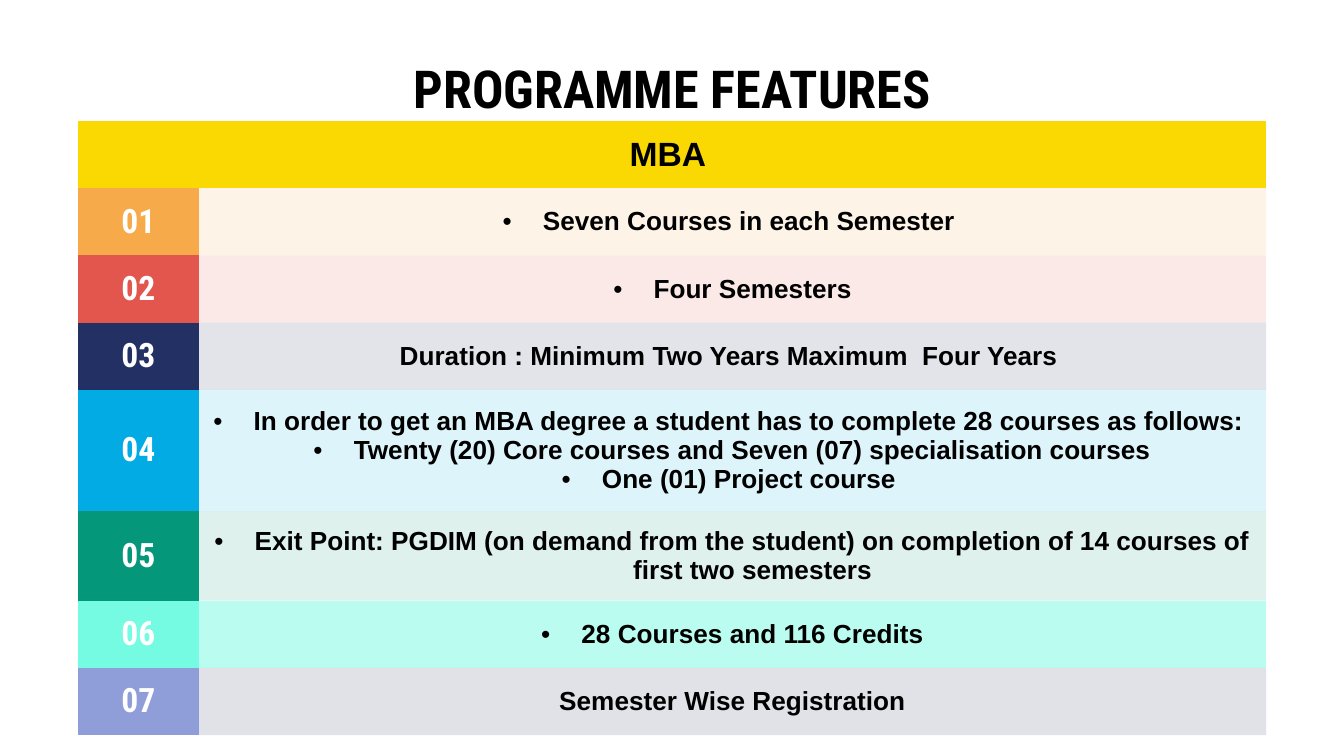
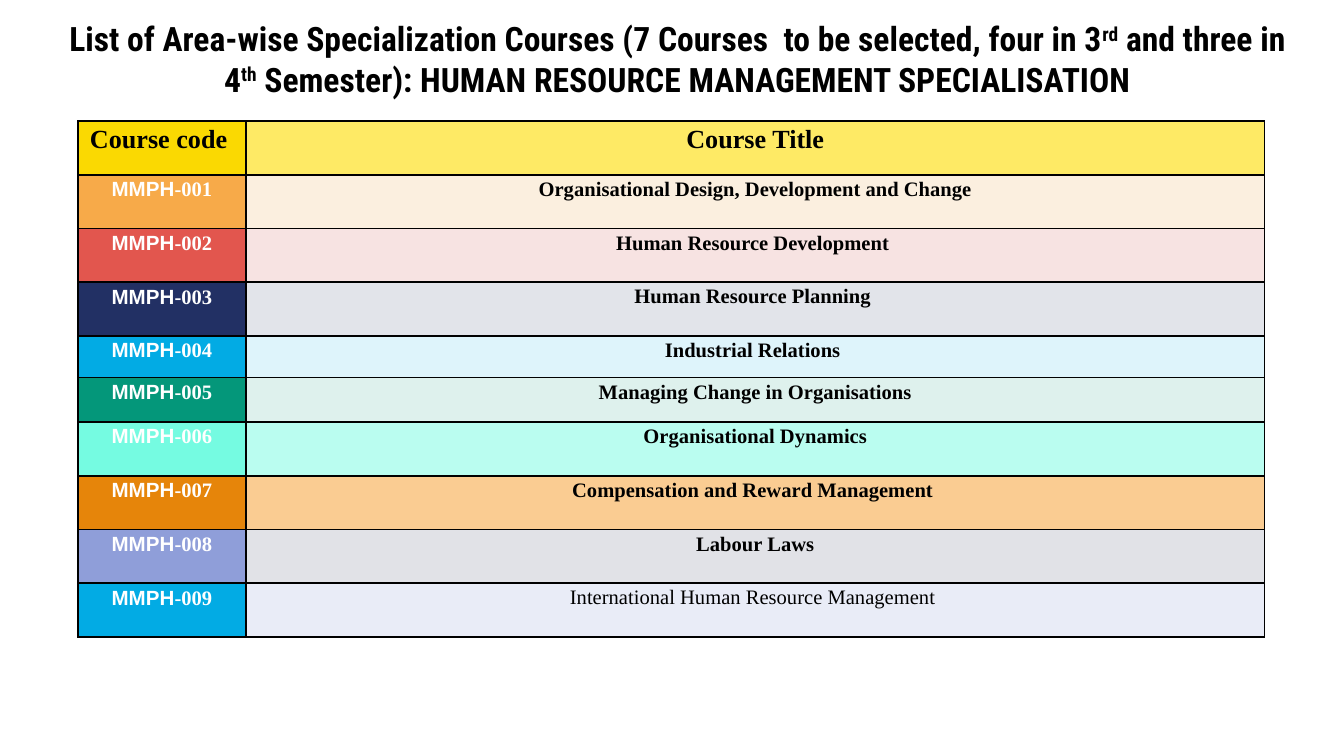
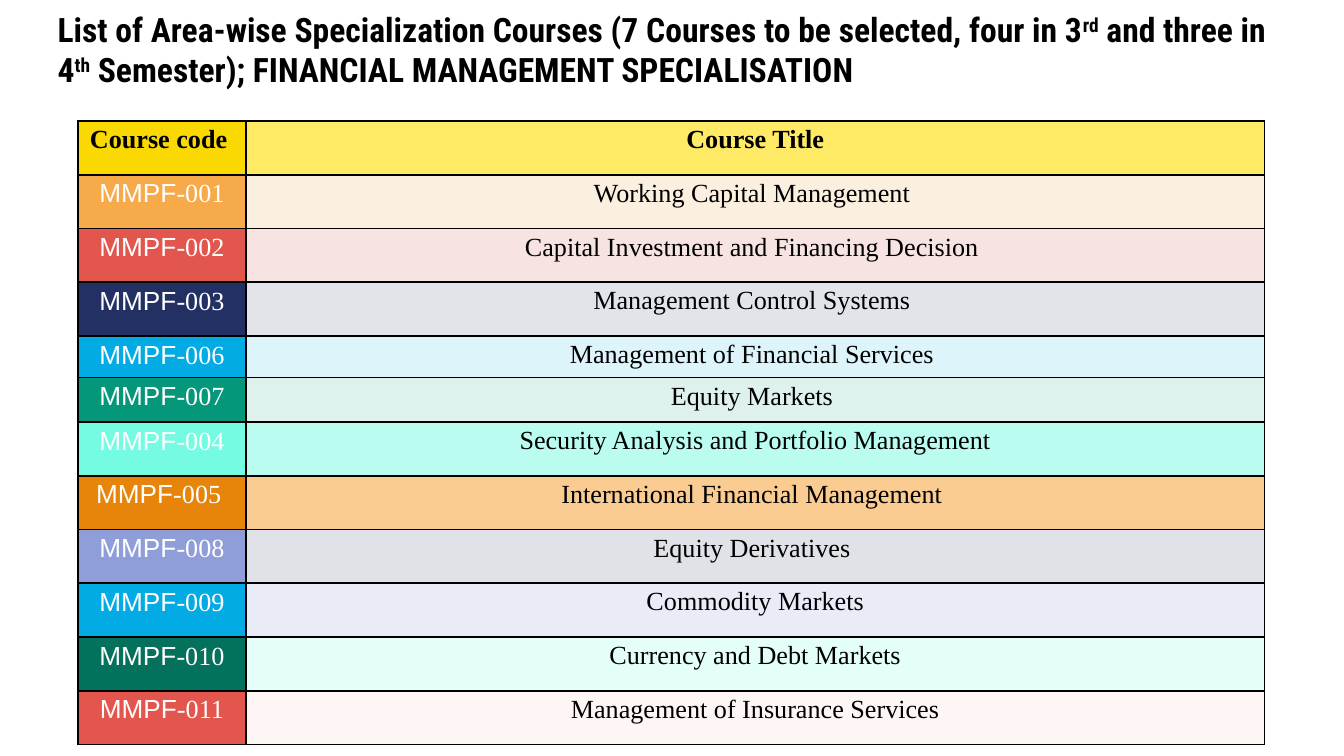
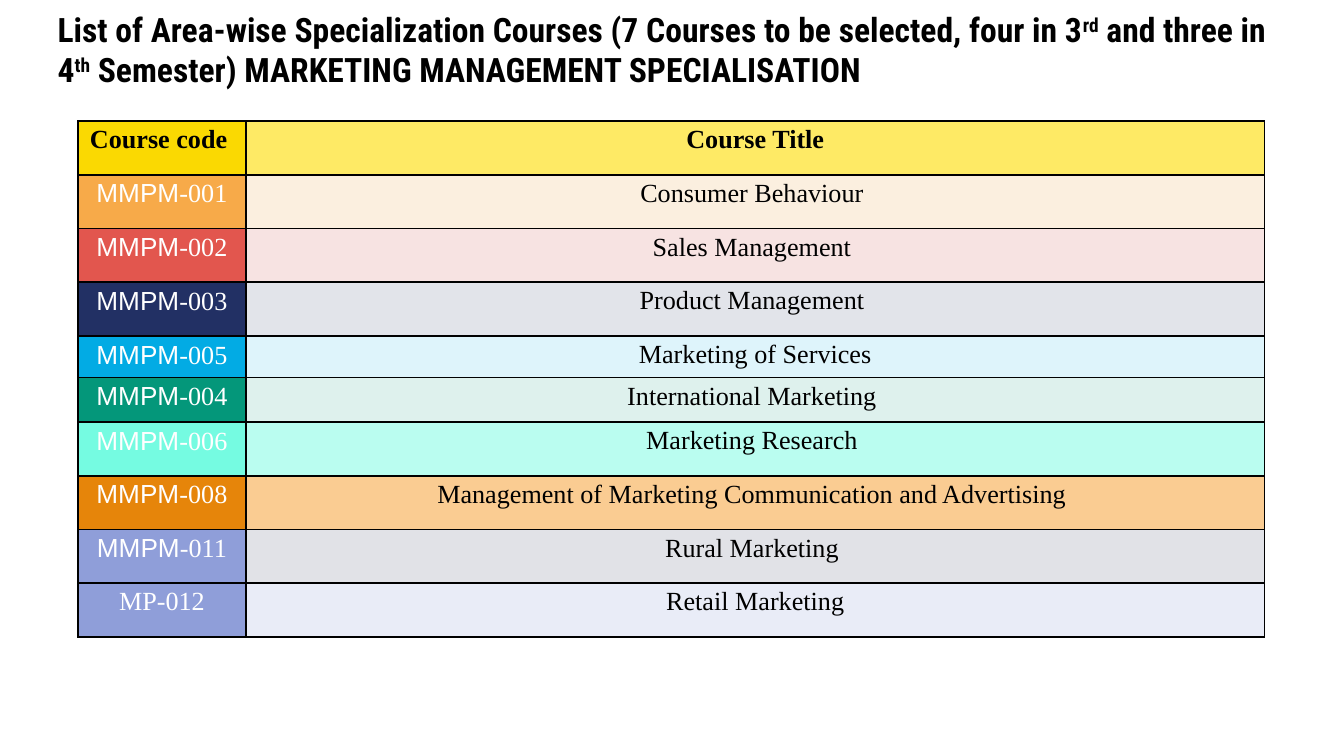
from lxml.etree import SubElement
from pptx import Presentation
from pptx.dml.color import RGBColor
from pptx.enum.text import MSO_ANCHOR as Anchor, PP_ALIGN as Align
from pptx.oxml import parse_xml
from pptx.oxml.ns import nsdecls, qn
from pptx.util import Inches, Pt

BLACK, WHITE = "000000", "FFFFFF"
YELLOW, LEMON = "FAD902", "FEEA65"
ORANGE, RED, NAVY, BLUE, GREEN = "F7AA49", "E2564E", "223064", "02ABE4", "04977A"
MINT, PALE_MINT, AMBER, PEACH = "75FBE1", "BAFDF0", "E6850A", "FACC92"
LILAC, INK, PINE = "8F9ED9", "1A244B", "03715C"
HEADING, SANS, SERIF = "Roboto Condensed", "Arial", "Times New Roman"
NO_STYLE = "{2D5ABB26-0587-4C30-8999-92F81FD0307C}"
SLIDE_WIDTH = Inches(10)
SLIDE_HEIGHT = SLIDE_WIDTH * 9 // 16
TABLE_LEFT, TABLE_TOP, TABLE_WIDTH = 0.58, 0.9, 8.83
TINT = 13

FEATURES_TITLE = "PROGRAMME FEATURES"
PROGRAMME = "MBA "
FEATURE_HEIGHTS = [0.4, 0.4, 0.4, 0.4, 0.72, 0.54, 0.4, 0.4]
FEATURES = [
    (ORANGE, (ORANGE, TINT), True, ["Seven Courses in each Semester "]),
    (RED, (RED, TINT), True, ["Four Semesters"]),
    (NAVY, (NAVY, TINT), False, ["Duration : Minimum Two Years Maximum  Four Years "]),
    (BLUE, (BLUE, TINT), True, [
        "In order to get an MBA degree a student has to complete 28 courses as follows: ",
        "Twenty (20) Core courses and Seven (07) specialisation courses",
        "One (01) Project course "]),
    (GREEN, (GREEN, TINT), True, [
        "Exit Point: PGDIM (on demand from the student) on completion of 14 courses of "
        "first two semesters"]),
    (MINT, (PALE_MINT, 100), True, ["28 Courses and 116 Credits"]),
    (LILAC, (INK, TINT), False, ["Semester Wise Registration"]),
]

COURSE_HEADS = [("Course code ", YELLOW), ("Course Title", LEMON)]
COURSE_FILLS = [
    (ORANGE, (AMBER, TINT)), (RED, ("C42920", TINT)), (NAVY, (NAVY, TINT)),
    (BLUE, (BLUE, TINT)), (GREEN, (GREEN, TINT)), (MINT, (PALE_MINT, 100)),
    (AMBER, (PEACH, 100)), (LILAC, (INK, TINT)), (BLUE, ("576EC6", TINT)),
    (PINE, ("2FFAD2", TINT)), (RED, ("F3BBB8", TINT)),
]
SHORT_ROWS = {4: 0.31, 5: 0.33}

SPECIALISATIONS = [
    {
        "lead": "List of Area-wise Specialization Courses (7 Courses  to be selected, four in 3",
        "tail": " Semester): HUMAN RESOURCE MANAGEMENT SPECIALISATION",
        "title_top": 0.08, "align": Align.CENTER, "size": 11, "bold": True, "plain_rows": {9},
        "height": 3.86, "prefix": "MMPH", "code_fills": {},
        "courses": [
            ("-001", "Organisational Design, Development and Change"),
            ("-002", "Human Resource Development "),
            ("-003", "Human Resource Planning "),
            ("-004", "Industrial Relations "),
            ("-005", "Managing Change in Organisations"),
            ("-006", "Organisational Dynamics"),
            ("-007", "Compensation and Reward Management "),
            ("-008", "Labour Laws"),
            ("-009", "International Human Resource Management "),
        ],
    },
    {
        "lead": "List of Area-wise Specialization Courses (7 Courses to be selected, four in 3",
        "tail": " Semester); FINANCIAL MANAGEMENT SPECIALISATION",
        "title_top": 0.01, "align": Align.LEFT, "size": 14, "bold": False, "plain_rows": set(),
        "height": 4.66, "prefix": "MMPF", "code_fills": {},
        "courses": [
            ("-001", "Working Capital Management "),
            ("-002", "Capital Investment and Financing Decision "),
            ("-003", "Management Control Systems "),
            ("-006", "Management of Financial Services "),
            ("-007", "Equity Markets "),
            ("-004", "Security Analysis and Portfolio Management"),
            ("-005 ", "International Financial Management "),
            ("-008", "Equity Derivatives "),
            ("-009", "Commodity Markets"),
            ("-010", "Currency and Debt Markets"),
            ("-011", "Management of Insurance Services"),
        ],
    },
    {
        "lead": "List of Area-wise Specialization Courses (7 Courses to be selected, four in 3",
        "tail": " Semester) MARKETING MANAGEMENT SPECIALISATION",
        "title_top": 0.01, "align": Align.LEFT, "size": 14, "bold": False, "plain_rows": set(),
        "height": 3.86, "prefix": "MMPM", "code_fills": {9: LILAC},
        "courses": [
            ("-001", "Consumer Behaviour "),
            ("-002", "Sales Management "),
            ("-003", "Product Management "),
            ("-005", "Marketing of Services"),
            ("-004", "International Marketing "),
            ("-006", "Marketing Research "),
            ("-008", "Management of Marketing Communication and Advertising "),
            ("-011", "Rural Marketing "),
            ("MP-012", "Retail Marketing"),
        ],
    },
]


def rgb(value):
    return RGBColor.from_string(value)


def apply(target, formats):
    for attribute, value in formats.items():
        setattr(target, attribute, value)


def insets(side, edge):
    return {"margin_left": Inches(side), "margin_right": Inches(side),
            "margin_top": Inches(edge), "margin_bottom": Inches(edge)}


def add_run(paragraph, text, size, face, color=BLACK, bold=True, baseline=0):
    run = paragraph.add_run()
    run.text = text
    apply(run.font, {"size": Pt(size), "name": face, "bold": bold})
    run.font.color.rgb = rgb(color)
    if baseline:
        run.font._element.set("baseline", str(baseline * 1000))


def add_title(slide, parts, box, size, align):
    frame = slide.shapes.add_textbox(*map(Inches, box)).text_frame
    apply(frame, {"word_wrap": True, "vertical_anchor": Anchor.MIDDLE, **insets(0.1, 0.1)})
    paragraph = frame.paragraphs[0]
    paragraph.alignment = align
    for text, baseline in parts:
        add_run(paragraph, text, size, HEADING, baseline=baseline)


def add_grid(slide, widths, heights, height):
    frame = slide.shapes.add_table(len(heights), len(widths), Inches(TABLE_LEFT), Inches(TABLE_TOP),
                                   Inches(TABLE_WIDTH), Inches(height))
    table = frame.table
    apply(table, {"first_row": False, "horz_banding": False})
    table._tbl.tblPr.find(qn("a:tableStyleId")).text = NO_STYLE
    for column, width in zip(table.columns, widths):
        column.width = Inches(width)
    for row, row_height in zip(table.rows, heights):
        row.height = Inches(row_height)
    frame.height = Inches(height)
    return table


def paint(cell, color, alpha=100):
    cell.fill.solid()
    cell.fill.fore_color.rgb = rgb(color)
    if alpha < 100:
        shade = cell._tc.tcPr.find(".//" + qn("a:srgbClr"))
        SubElement(shade, qn("a:alpha"), val=str(alpha * 1000))


def outline(cell):
    for place, side in enumerate("LRTB"):
        cell._tc.tcPr.insert(place, parse_xml(
            f'<a:ln{side} {nsdecls("a")} w="12700"><a:solidFill><a:srgbClr val="{BLACK}"/>'
            f'</a:solidFill></a:ln{side}>'))


def add_bullet(paragraph):
    properties = paragraph._p.get_or_add_pPr()
    properties.set("marL", str(Inches(0.3)))
    properties.set("indent", str(Inches(-0.3)))
    color = SubElement(properties, qn("a:buClr"))
    SubElement(color, qn("a:srgbClr"), val=BLACK)
    SubElement(properties, qn("a:buFont"), typeface=SANS)
    SubElement(properties, qn("a:buChar"), char="•")


def feature_cell(cell, fill, lines, size, face, color=BLACK, bulleted=False):
    apply(cell, {"vertical_anchor": Anchor.MIDDLE, **insets(0.1, 0.1)})
    paint(cell, *fill)
    for place, line in enumerate(lines):
        frame = cell.text_frame
        paragraph = frame.add_paragraph() if place else frame.paragraphs[0]
        paragraph.alignment = Align.CENTER
        if bulleted:
            add_bullet(paragraph)
        add_run(paragraph, line, size, face, color)


def course_cell(cell, fill, runs, size, color=BLACK, bold=True):
    apply(cell, insets(0.07, 0))
    paint(cell, *fill)
    outline(cell)
    paragraph = cell.text_frame.paragraphs[0]
    apply(paragraph, {"alignment": Align.CENTER, "line_spacing": 1.15})
    for text, face in runs:
        add_run(paragraph, text, size, face, color, bold)


def build_features(slide):
    add_title(slide, [(FEATURES_TITLE, 0)], (0.5, 0.45, 9, 0.41), 28, Align.CENTER)
    table = add_grid(slide, [0.9, 7.94], FEATURE_HEIGHTS, 4.43)
    table.cell(0, 0).merge(table.cell(0, 1))
    feature_cell(table.cell(0, 0), (YELLOW,), [PROGRAMME], 18, SANS)
    for number, (solid, tint, bulleted, lines) in enumerate(FEATURES, 1):
        feature_cell(table.cell(number, 0), (solid,), [f"{number:02}"], 18, HEADING, WHITE)
        feature_cell(table.cell(number, 1), tint, lines, 14, SANS, bulleted=bulleted)


def build_specialisation(slide, area):
    title = [(area["lead"], 0), ("rd", 30), (" and three in 4", 0), ("th", 30), (area["tail"], 0)]
    add_title(slide, title, (0.33, area["title_top"], 9.42, 0.71), 18, area["align"])
    courses, size = area["courses"], area["size"]
    heights = [SHORT_ROWS.get(row, 0.4) for row in range(len(courses) + 1)]
    table = add_grid(slide, [1.25, 7.58], heights, area["height"])
    for column, (head, fill) in enumerate(COURSE_HEADS):
        course_cell(table.cell(0, column), (fill,), [(head, SERIF)], 14)
    for row, ((code, course), (solid, tint)) in enumerate(zip(courses, COURSE_FILLS), 1):
        code_runs = [(code, SERIF)]
        if code.startswith("-"):
            code_runs.insert(0, (area["prefix"], SANS))
        solid = area["code_fills"].get(row, solid)
        course_cell(table.cell(row, 0), (solid,), code_runs, size, WHITE, area["bold"])
        bold = area["bold"] and row not in area["plain_rows"]
        course_cell(table.cell(row, 1), tint, [(course, SERIF)], size, bold=bold)


def main():
    deck = Presentation()
    apply(deck, {"slide_width": SLIDE_WIDTH, "slide_height": SLIDE_HEIGHT})
    blank = deck.slide_layouts[6]
    build_features(deck.slides.add_slide(blank))
    for area in SPECIALISATIONS:
        build_specialisation(deck.slides.add_slide(blank), area)
    deck.save("out.pptx")


if __name__ == "__main__":
    main()
